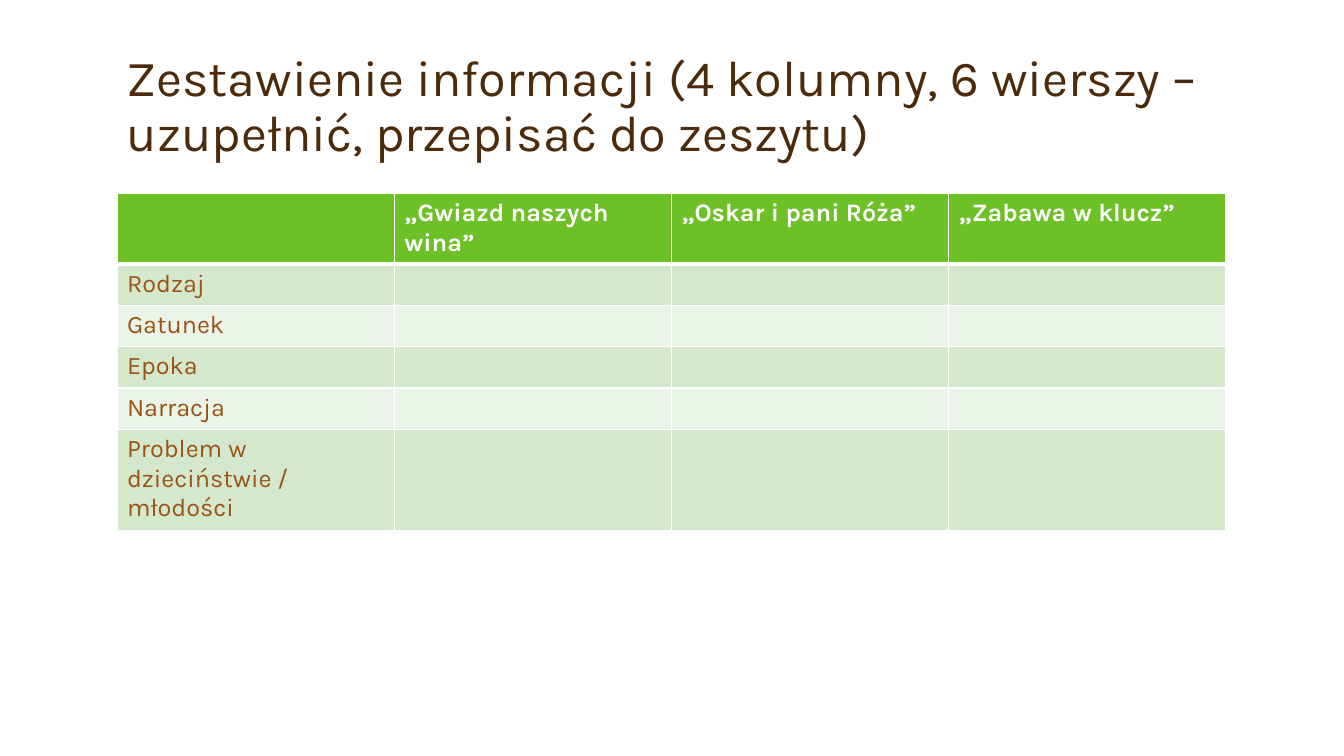
from lxml import etree
from pptx import Presentation
from pptx.dml.color import RGBColor
from pptx.enum.text import MSO_ANCHOR
from pptx.oxml.ns import qn
from pptx.util import Inches, Pt

FONT = "Karla"
WHITE = RGBColor(0xFF, 0xFF, 0xFF)
DARK_BROWN = RGBColor(0x4D, 0x2A, 0x0B)
BROWN = RGBColor(0x9A, 0x53, 0x15)
GREEN = RGBColor(0x6D, 0xC0, 0x25)
BAND_DARK = RGBColor(0xD4, 0xE8, 0xCD)
BAND_LIGHT = RGBColor(0xEB, 0xF4, 0xE8)

LEFT, WIDTH = Inches(1.16), Inches(11)
ROW_HEIGHT = Inches(0.41)

TITLE = "Zestawienie informacji (4 kolumny, 6 wierszy – uzupełnić, przepisać do zeszytu)"
BOOKS = ["", "„Gwiazd naszych wina”", "„Oskar i pani Róża”", "„Zabawa w klucz”"]
FEATURES = ["Rodzaj", "Gatunek", "Epoka", "Narracja",
            "Problem w dzieciństwie / młodości"]


def style_paragraph(paragraph, size, color, bold=False):
    font = paragraph.font
    font.name, font.size, font.bold = FONT, Pt(size), bold
    font.color.rgb = color


def set_borders(cell, widths):
    """Draw white cell borders; widths maps a side (L, R, T, B) to points."""
    properties = cell._tc.get_or_add_tcPr()
    for index, (side, width) in enumerate(widths.items()):
        line = etree.Element(qn(f"a:ln{side}"), w=str(Pt(width)))
        fill = etree.SubElement(line, qn("a:solidFill"))
        etree.SubElement(fill, qn("a:srgbClr"), val=str(WHITE))
        properties.insert(index, line)


def add_title(slide, left, top, width, height):
    frame = slide.shapes.add_textbox(left, top, width, height).text_frame
    frame.word_wrap = True
    frame.vertical_anchor = MSO_ANCHOR.BOTTOM
    paragraph = frame.paragraphs[0]
    paragraph.text = TITLE
    paragraph.line_spacing = 0.9
    style_paragraph(paragraph, 36, DARK_BROWN)


def add_comparison_table(slide, left, top, width):
    rows = [BOOKS] + [[feature] + [""] * (len(BOOKS) - 1) for feature in FEATURES]
    table = slide.shapes.add_table(len(rows), len(BOOKS), left, top, width,
                                   ROW_HEIGHT * len(rows)).table
    for row_index, texts in enumerate(rows):
        table.rows[row_index].height = ROW_HEIGHT
        header = row_index == 0
        band = BAND_DARK if row_index % 2 else BAND_LIGHT
        for column_index, text in enumerate(texts):
            cell = table.cell(row_index, column_index)
            cell.text = text
            cell.fill.solid()
            cell.fill.fore_color.rgb = GREEN if header else band
            style_paragraph(cell.text_frame.paragraphs[0], 18,
                            WHITE if header else BROWN, header)
            set_borders(cell, {"L": 1, "R": 1,
                               "T": 3 if row_index == 1 else 1,
                               "B": 3 if header else 1})


def main():
    presentation = Presentation()
    presentation.slide_width = Inches(13.33)
    presentation.slide_height = Inches(7.5)
    slide = presentation.slides.add_slide(presentation.slide_layouts[6])
    # Heading
    add_title(slide, LEFT, Inches(0.33), WIDTH, Inches(1.33))
    # Table to fill in
    add_comparison_table(slide, LEFT, Inches(1.92), WIDTH)
    presentation.save("out.pptx")


if __name__ == "__main__":
    main()
